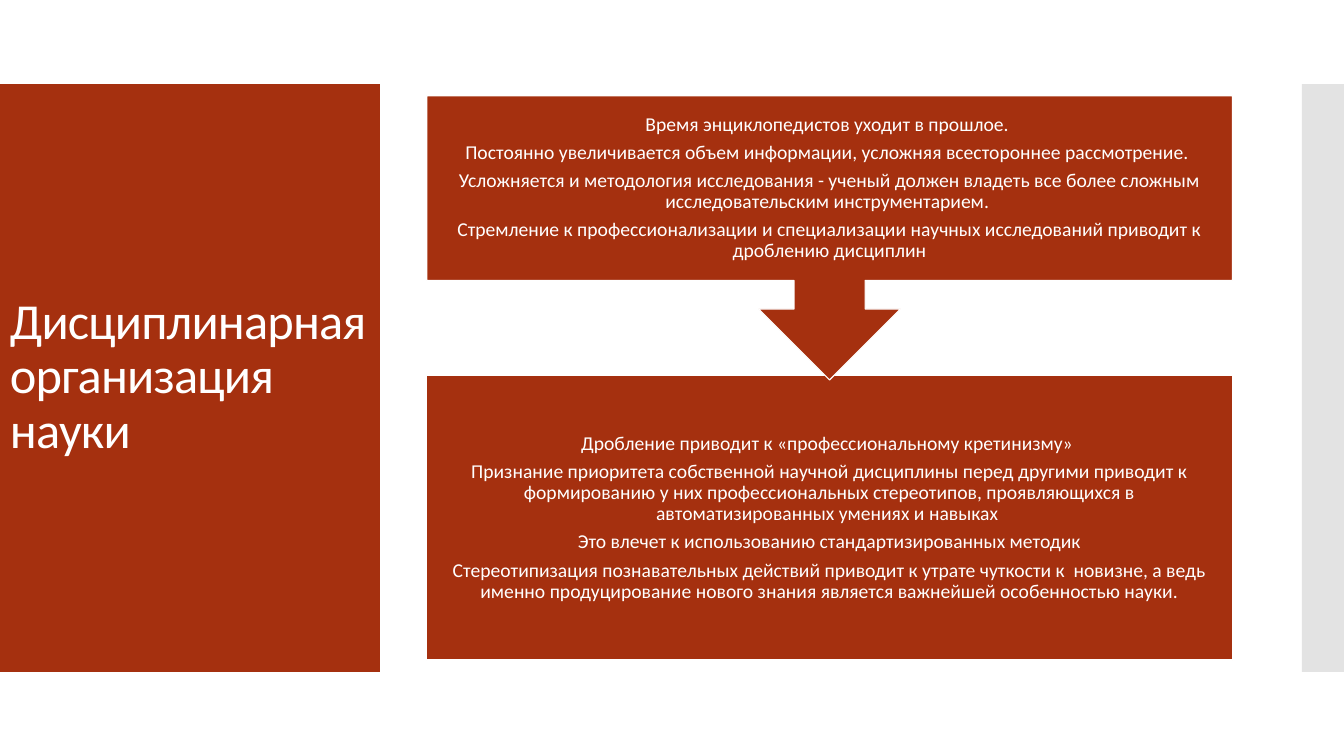
import pptx
import pptx.util
import pptx.dml.color
import pptx.enum.shapes
import pptx.enum.text
import pptx.oxml

Pt = pptx.util.Pt
Shape = pptx.enum.shapes.MSO_SHAPE
Align = pptx.enum.text.PP_ALIGN

RUST = "A5300F"
WHITE = "FFFFFF"
GREY = "C8C8C8"


def color(value):
    return pptx.dml.color.RGBColor.from_string(value)


def write(frame, paragraphs, size, align=Align.LEFT, after=0, tracking=0, font="Calibri"):
    for index, wording in enumerate(paragraphs):
        paragraph = frame.paragraphs[0] if index == 0 else frame.add_paragraph()
        paragraph.alignment = align
        paragraph.line_spacing = 0.9
        paragraph.space_after = Pt(after)
        run = paragraph.add_run()
        run.text = wording
        run.font.name = font
        run.font.size = Pt(size)
        run.font.color.rgb = color(WHITE)
        if tracking:
            run.font._element.set("spc", str(round(tracking * 100)))


class SlideBuilder:
    def __init__(self, slide):
        self.shapes = slide.shapes

    def block(self, kind, left, top, width, height, fill, outline=None, rotation=0, opacity=None):
        block = self.shapes.add_shape(kind, Pt(left), Pt(top), Pt(width), Pt(height))
        block.shadow.inherit = False
        block.rotation = rotation
        block.fill.solid()
        block.fill.fore_color.rgb = color(fill)
        if outline:
            block.line.color.rgb = color(outline)
            block.line.width = Pt(0.85)
        else:
            block.line.fill.background()
        if opacity is not None:
            rgb = block.fill._xPr.find(".//" + pptx.oxml.ns.qn("a:srgbClr"))
            alpha = pptx.oxml.parse_xml(
                f'<a:alpha {pptx.oxml.ns.nsdecls("a")} val="{opacity * 1000}"/>')
            rgb.append(alpha)

    def text(self, paragraphs, left, top, width, height, inset_x, inset_y, **style):
        frame = self.shapes.add_textbox(Pt(left), Pt(top), Pt(width), Pt(height)).text_frame
        frame.word_wrap = True
        frame.vertical_anchor = pptx.enum.text.MSO_ANCHOR.MIDDLE
        frame.margin_left = frame.margin_right = Pt(inset_x)
        frame.margin_top = frame.margin_bottom = Pt(inset_y)
        write(frame, paragraphs, **style)


CAUSES = [
    "Время энциклопедистов уходит в прошлое. ",
    "Постоянно увеличивается объем информации, усложняя всестороннее рассмотрение. ",
    "Усложняется и методология исследования - ученый должен владеть все более сложным "
    "исследовательским инструментарием. ",
    "Стремление к профессионализации и специализации научных исследований приводит к "
    "дроблению дисциплин",
]
EFFECTS = [
    "Дробление приводит к «профессиональному кретинизму» ",
    "Признание приоритета собственной научной дисциплины перед другими приводит к "
    "формированию у них профессиональных стереотипов, проявляющихся в "
    "автоматизированных умениях и навыках ",
    "Это влечет к использованию стандартизированных методик",
    "Стереотипизация познавательных действий приводит к утрате чуткости к  новизне, а ведь "
    "именно продуцирование нового знания является важнейшей особенностью науки.",
]


def main():
    presentation = pptx.Presentation()
    presentation.slide_width = Pt(960)
    presentation.slide_height = Pt(540)
    builder = SlideBuilder(presentation.slides.add_slide(presentation.slide_layouts[6]))

    builder.block(Shape.RECTANGLE, 0, 60, 271.4, 420, RUST)
    builder.block(Shape.RECTANGLE, 930, 60, 30, 420, GREY, opacity=50)
    builder.text(["Дисциплинарная организация науки"], 0, 88.5, 281.5, 362, 7.2, 3.6,
                 size=36, tracking=-0.6)

    left, width, step_height = 304.8, 575.5, 203
    causes_top, effects_top, causes_text_height = 68.4, 268.5, 132
    step_style = dict(size=14, align=Align.CENTER, after=4.9)

    builder.block(Shape.RECTANGLE, left, effects_top, width, step_height, RUST, WHITE)
    builder.text(EFFECTS, left, effects_top, width, step_height, 8, 8, **step_style)
    builder.block(Shape.UP_ARROW_CALLOUT, left, causes_top, width, step_height, RUST, WHITE,
                  rotation=180)
    builder.text(CAUSES, left, causes_top, width, causes_text_height, 8, 8, **step_style)

    presentation.save("out.pptx")


if __name__ == "__main__":
    main()
